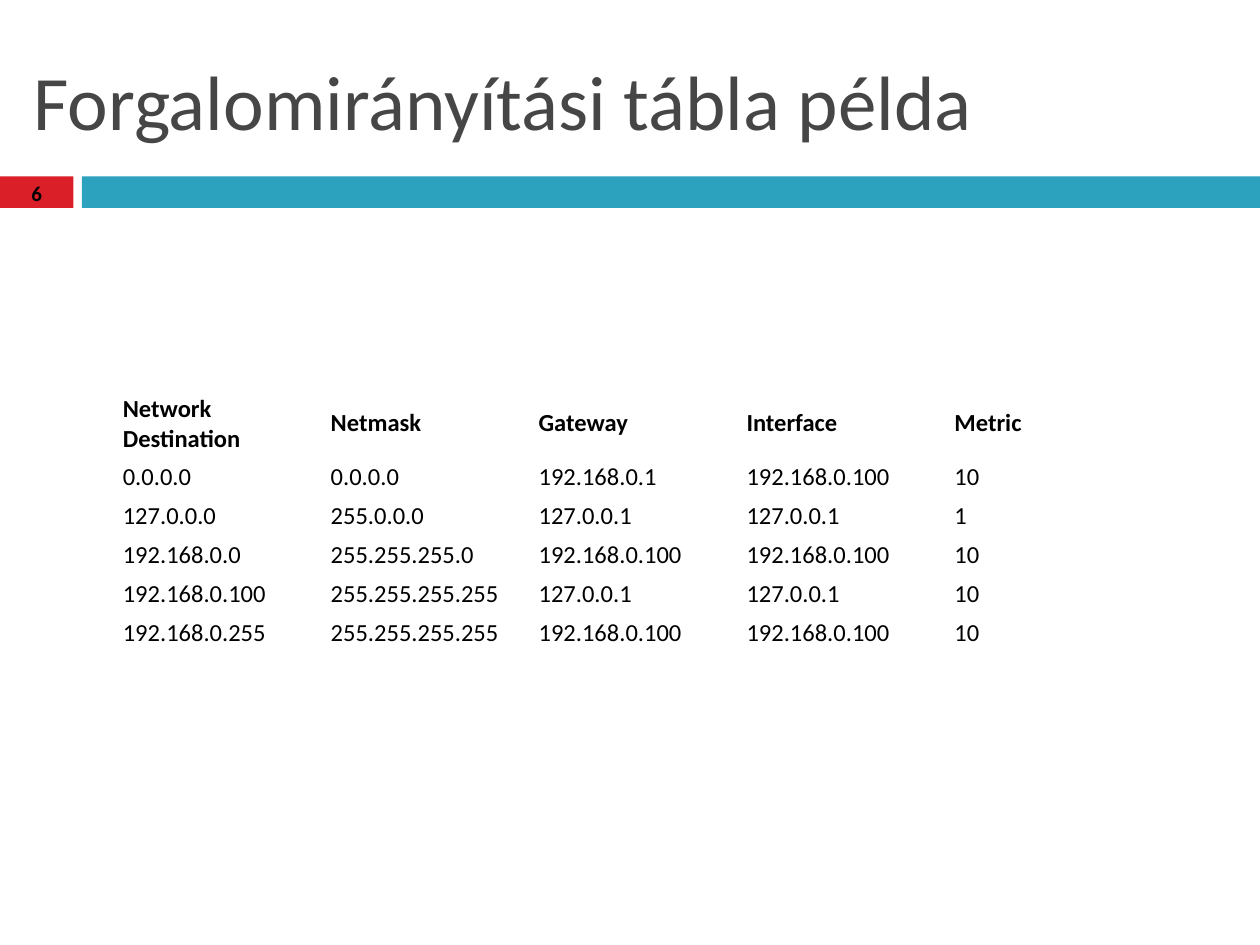
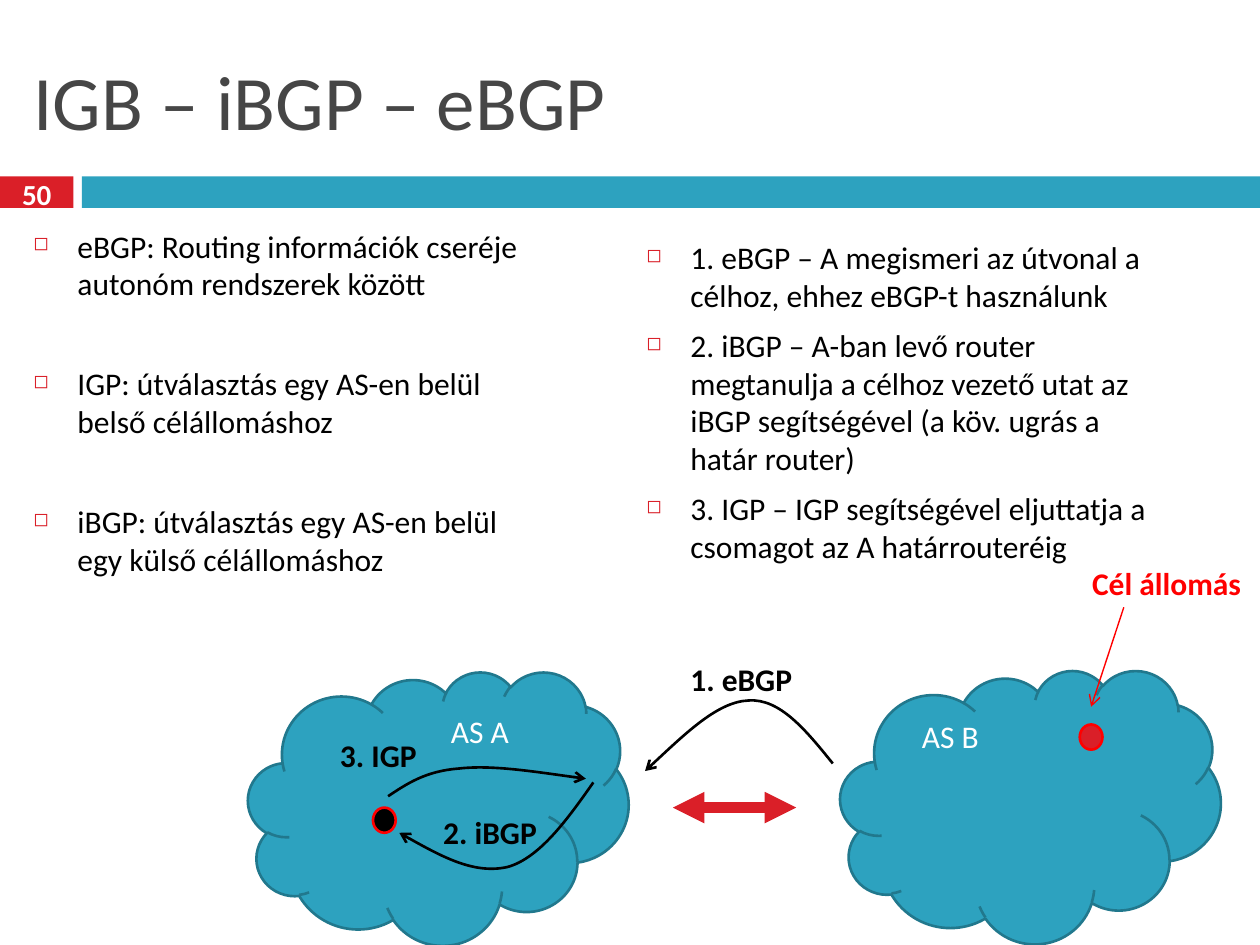
from lxml import etree
from pptx import Presentation
from pptx.dml.color import RGBColor
from pptx.enum import shapes, text
from pptx.oxml import ns
from pptx.util import Pt

RED, TEAL, DARK_TEAL = "DA1F28", "2DA2BF", "21788D"
BLACK, WHITE, GREY, BRIGHT_RED = "000000", "FFFFFF", "464646", "FF0000"
FONT = "Calibri"
PRESET = shapes.MSO_SHAPE


def colour(value):
    return RGBColor.from_string(value)


def add_xml(parent, tag, **attributes):
    return etree.SubElement(parent, ns.qn(tag), attributes)


class Deck:
    def __init__(self):
        self.show = Presentation()
        self.show.slide_width, self.show.slide_height = Pt(720), Pt(540)
        self.slide = None

    def start(self, title, number, number_size, number_colour):
        self.slide = self.show.slides.add_slide(self.show.slide_layouts[6])
        self.shape(PRESET.RECTANGLE, 0, 100.8, 42, 18, RED)
        self.shape(PRESET.RECTANGLE, 46.8, 100.8, 673.2, 18, TEAL)
        self.label(title, 12, 18, 696, 78, 44, GREY, middle=True)
        self.label(number, 0, 98.6, 42, 24, number_size, number_colour,
                   bold=True, middle=True, align=text.PP_ALIGN.CENTER)

    def style(self, paragraph, size, ink, bold=False):
        for run in paragraph.runs:
            run.font.name, run.font.size, run.font.bold = FONT, Pt(size), bold
            run.font.color.rgb = colour(ink)

    def shape(self, preset, left, top, width, height, fill, edge=None):
        shape = self.slide.shapes.add_shape(
            preset, Pt(left), Pt(top), Pt(width), Pt(height))
        shape.shadow.inherit = False
        shape.fill.solid()
        shape.fill.fore_color.rgb = colour(fill)
        if edge:
            self.outline(shape, edge, 1.5)
        else:
            shape.line.fill.background()

    def outline(self, shape, ink, width, head=None, tail=None):
        shape.line.color.rgb = colour(ink)
        shape.line.width = Pt(width)
        ln = shape._element.spPr.find(ns.qn("a:ln"))
        for tag, kind in (("a:headEnd", head), ("a:tailEnd", tail)):
            if kind:
                add_xml(ln, tag, type=kind)

    def frame(self, left, top, width, height):
        box = self.slide.shapes.add_textbox(
            Pt(left), Pt(top), Pt(width), Pt(height))
        box.text_frame.word_wrap = True
        return box.text_frame

    def label(self, words, left, top, width, height, size, ink,
              bold=False, middle=False, align=text.PP_ALIGN.LEFT):
        frame = self.frame(left, top, width, height)
        frame.text = words
        if middle:
            frame.vertical_anchor = text.MSO_ANCHOR.MIDDLE
        frame.paragraphs[0].alignment = align
        self.style(frame.paragraphs[0], size, ink, bold)

    def bullets(self, points, left, top, gap):
        frame = self.frame(left, top, 306, 402)
        frame.text = "\n".join(points)
        for paragraph in frame.paragraphs:
            paragraph.space_after = Pt(gap)
            self.style(paragraph, 18, BLACK)
            props = paragraph._p.get_or_add_pPr()
            props.set("marL", str(Pt(25.2)))
            props.set("indent", str(Pt(-25.2)))
            add_xml(add_xml(props, "a:buClr"), "a:srgbClr", val=RED)
            add_xml(props, "a:buSzPct", val="60000")
            add_xml(props, "a:buChar", char="◻")

    def arrow(self, start, end, ink, width, head=None, tail=None):
        line = self.slide.shapes.add_connector(
            shapes.MSO_CONNECTOR.STRAIGHT, *map(Pt, start + end))
        self.outline(line, ink, width, head, tail)
        add_xml(line._element.spPr, "a:effectLst")

    def curve(self, start, *controls):
        builder = self.slide.shapes.build_freeform(*map(Pt, start), scale=1.0)
        builder.add_line_segments(
            [(Pt(x), Pt(y)) for x, y in controls], close=False)
        curve = builder.convert_to_shape()
        curve.shadow.inherit = False
        curve.fill.background()
        self.outline(curve, BLACK, 1.5, tail="arrow")
        route = next(curve._element.iter(ns.qn("a:path")))
        steps = route.findall(ns.qn("a:lnTo"))
        for first in range(0, len(steps), 3):
            bend = add_xml(route, "a:cubicBezTo")
            for step in steps[first:first + 3]:
                bend.append(step[0])
                route.remove(step)

    def table(self, rows, left, top, column, header, row_height):
        height = header + row_height * (len(rows) - 1)
        table = self.slide.shapes.add_table(
            len(rows), len(rows[0]), Pt(left), Pt(top),
            Pt(column * len(rows[0])), Pt(height)).table
        table.first_row = table.horz_banding = False
        for r, values in enumerate(rows):
            table.rows[r].height = Pt(row_height if r else header)
            for c, value in enumerate(values):
                cell = table.cell(r, c)
                cell.text = value
                cell.vertical_anchor = text.MSO_ANCHOR.MIDDLE
                cell.margin_left = cell.margin_right = Pt(5.4)
                cell.margin_top = cell.margin_bottom = Pt(2.7)
                cell.fill.solid()
                cell.fill.fore_color.rgb = colour(WHITE)
                self.style(cell.text_frame.paragraphs[0], 14, BLACK, r == 0)


def routing_table(deck):
    deck.start("Forgalomirányítási tábla példa", "6", 12, BLACK)
    deck.table([
        ("Network Destination", "Netmask", "Gateway", "Interface", "Metric"),
        ("0.0.0.0", "0.0.0.0", "192.168.0.1", "192.168.0.100", "10"),
        ("127.0.0.0", "255.0.0.0", "127.0.0.1", "127.0.0.1", "1"),
        ("192.168.0.0", "255.255.255.0", "192.168.0.100", "192.168.0.100", "10"),
        ("192.168.0.100", "255.255.255.255", "127.0.0.1", "127.0.0.1", "10"),
        ("192.168.0.255", "255.255.255.255", "192.168.0.100", "192.168.0.100", "10"),
    ], 64.8, 222.5, 118.8, 38.2, 22.3)


def protocols(deck):
    deck.start("IGB – iBGP – eBGP", "50", 16.6, WHITE)
    deck.bullets([
        "eBGP: Routing információk cseréje autonóm rendszerek között",
        "IGP: útválasztás egy AS-en belül belső célállomáshoz",
        "iBGP: útválasztás egy AS-en belül egy külső célállomáshoz",
    ], 12, 126, 35.5)
    deck.bullets([
        "1. eBGP – A megismeri az útvonal a célhoz, ehhez eBGP-t használunk",
        "2. iBGP – A-ban levő router megtanulja a célhoz vezető utat az iBGP "
        "segítségével (a köv. ugrás a határ router)",
        "3. IGP – IGP segítségével eljuttatja a csomagot az A határrouteréig",
    ], 362.2, 132.5, 7)

    for left, top in ((141.8, 383.8), (480.2, 383)):
        deck.shape(PRESET.CLOUD, left, top, 217.4, 156.2, TEAL, DARK_TEAL)
    for left, top, fill in ((213.1, 461.5, BLACK), (617, 414, RED)):
        deck.shape(PRESET.OVAL, left, top, 13, 14.4, fill, BRIGHT_RED)

    deck.arrow((384.5, 461.5), (455, 461.5), RED, 6, "triangle", "triangle")
    deck.arrow((642.2, 347), (623.5, 403.9), BRIGHT_RED, 0.79, tail="arrow")
    deck.curve((475.9, 436.3), (460.8, 417.6), (445.7, 398.9), (427.7, 400.3),
               (410.4, 401), (389.5, 421.2), (368.6, 440.6))
    deck.curve((339.1, 447.1), (324, 468.7), (308.2, 490.3), (290.2, 495.4),
               (271.4, 499.7), (249.8, 488.2), (228.2, 475.9))
    deck.curve((221.8, 455), (232.6, 447.8), (243.4, 440.6), (262.1, 439.2),
               (280.8, 437), (308.2, 441.4), (334.8, 445))

    for words, left, top, width, ink, bold in (
        ("Cél állomás", 617, 319, 103, BRIGHT_RED, True),
        ("1. eBGP", 387.4, 373.7, 84.2, BLACK, True),
        ("2. iBGP", 246.2, 460.8, 88.6, BLACK, True),
        ("3. IGP", 187.2, 416.9, 91.4, BLACK, True),
        ("AS A", 250.6, 403.2, 67.7, WHITE, False),
        ("AS B", 519.8, 406.1, 67.7, WHITE, False),
    ):
        deck.label(words, left, top, width, 28.8, 18, ink, bold)


def main():
    deck = Deck()
    routing_table(deck)
    protocols(deck)
    deck.show.save("out.pptx")


if __name__ == "__main__":
    main()
